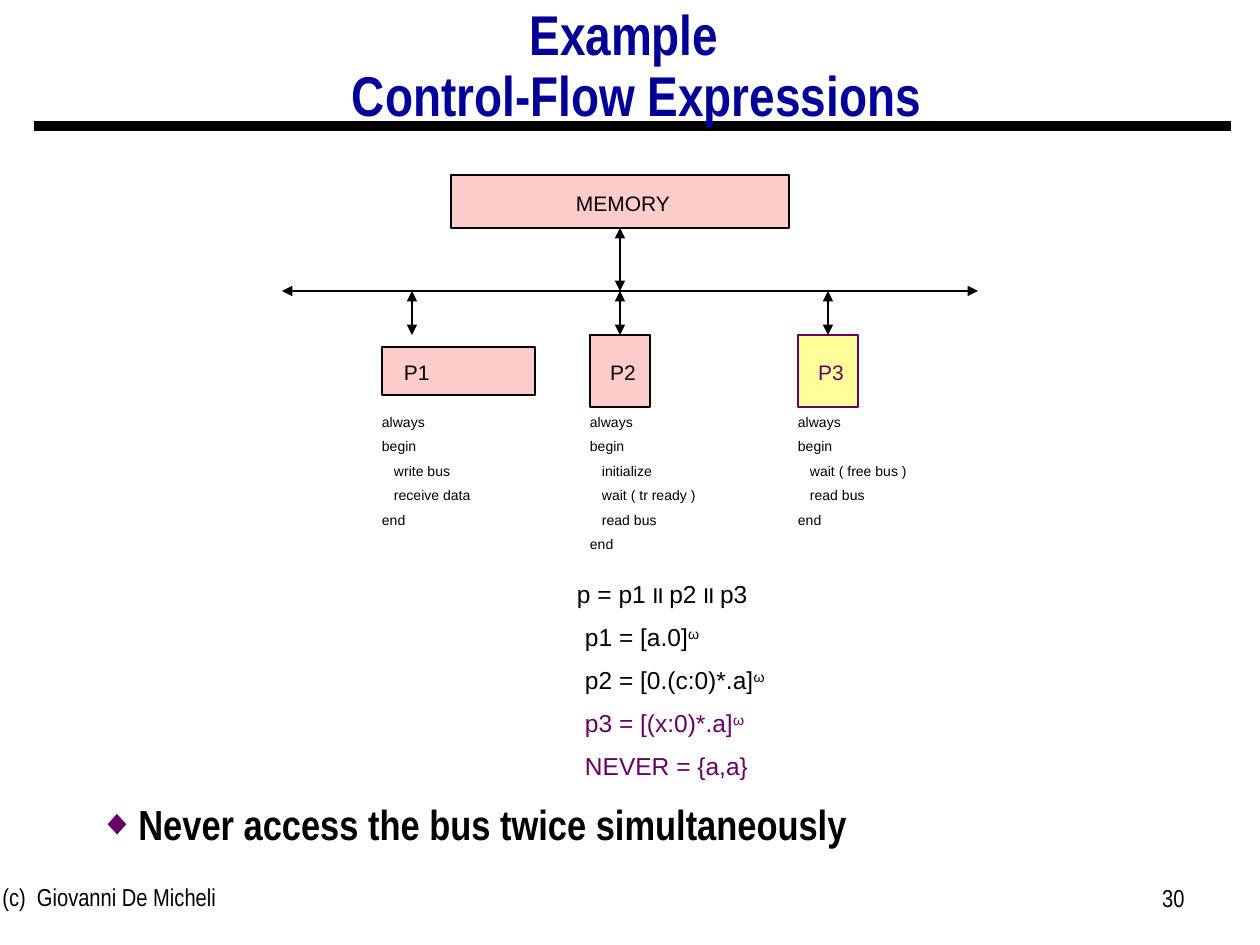
from pptx import Presentation
from pptx.dml.color import RGBColor
from pptx.enum.shapes import MSO_CONNECTOR as LINE, MSO_SHAPE as SHAPE
from pptx.enum.text import MSO_ANCHOR as ANCHOR, PP_ALIGN as ALIGN
from pptx.oxml.ns import qn
from pptx.util import Pt
from lxml.etree import SubElement as sub

SCALE = 914400 / 126
BLACK = RGBColor(0x00, 0x00, 0x00)
NAVY = RGBColor(0x00, 0x00, 0x99)
PURPLE = RGBColor(0x66, 0x00, 0x66)
PINK = RGBColor(0xFF, 0xCC, 0xCC)
YELLOW = RGBColor(0xFF, 0xFF, 0x99)
NARROW = "Arial Narrow"

BUS_Y = 291
COL_X, COL_STEP = 382, 208
STEM = 30  # from a column's left edge to its arrow

PROGRAMS = [
    ["always", "begin", ">write bus", ">receive data", "end"],
    ["always", "begin", ">initialize", ">wait ( tr ready )", ">read bus", "end"],
    ["always", "begin", ">wait ( free bus )", ">read bus", "end"],
]
FORMULAS = [
    ("p = p1 װ p2 װ p3", "", BLACK),
    (">p1 = [a.0]", "ω", BLACK),
    (">p2 = [0.(c:0)*.a]", "ω", BLACK),
    (">p3 = [(x:0)*.a]", "ω", PURPLE),
    (">NEVER = {a,a}", "", PURPLE),
]


def px(n):
    return round(n * SCALE)


def style(run, size, color=BLACK, font="Arial", bold=False):
    run.font.size = Pt(size)
    run.font.name = font
    run.font.bold = bold
    run.font.color.rgb = color


def add_text(slide, text, x, y, w, h, size, color=BLACK, bold=False, align=ALIGN.LEFT):
    """Add a one-paragraph text box in the narrow font and return its frame."""
    frame = slide.shapes.add_textbox(px(x), px(y), px(w), px(h)).text_frame
    frame.word_wrap = True
    frame.text = text
    para = frame.paragraphs[0]
    para.alignment = align
    for run in para.runs:
        style(run, size, color, NARROW, bold)
    return frame


def add_lines(slide, rows, x, y, w, h, size, gap, indent):
    """Stack rows of (text, superscript, colour); a leading > indents a row."""
    frame = slide.shapes.add_textbox(px(x), px(y), px(w), px(h)).text_frame
    frame.word_wrap = True
    frame.margin_left = 0
    for i, (text, power, color) in enumerate(rows):
        para = frame.paragraphs[0] if i == 0 else frame.add_paragraph()
        para.text = text.lstrip(">")
        if i:
            para.space_before = Pt(gap)
        if text.startswith(">"):
            para._p.get_or_add_pPr().set("marL", str(px(indent)))
        style(para.runs[0], size, color)
        if power:
            run = para.add_run()
            run.text = power
            style(run, size, color)
            run.font._element.set("baseline", "30000")


def add_box(slide, label, x, y, w, h, fill=PINK, color=BLACK, inset=6, align=ALIGN.CENTER):
    box = slide.shapes.add_shape(SHAPE.RECTANGLE, px(x), px(y), px(w), px(h))
    box.shadow.inherit = False
    box.fill.solid()
    box.fill.fore_color.rgb = fill
    box.line.color.rgb = color
    box.line.width = Pt(0.75)
    frame = box.text_frame
    frame.margin_left, frame.margin_right = px(inset), 0
    frame.margin_top, frame.margin_bottom = px(3), 0
    frame.vertical_anchor = ANCHOR.MIDDLE
    frame.text = label
    para = frame.paragraphs[0]
    para.alignment = align
    style(para.runs[0], 12, color)
    return box


def add_line(slide, x1, y1, x2, y2, width=0.75, heads=True):
    line = slide.shapes.add_connector(LINE.STRAIGHT, px(x1), px(y1), px(x2), px(y2))
    line.line.color.rgb = BLACK
    line.line.width = Pt(width)
    props = line._element.spPr
    if heads:
        for end in ("a:headEnd", "a:tailEnd"):
            sub(props.find(qn("a:ln")), qn(end), type="triangle")
    sub(props, qn("a:effectLst"))
    return line


def add_bullet(para, mark, color, size, indent):
    props = para._p.get_or_add_pPr()
    props.set("marL", str(px(indent)))
    props.set("indent", str(-px(indent)))
    sub(sub(props, qn("a:buClr")), qn("a:srgbClr"), val=str(color))
    sub(props, qn("a:buSzPct"), val=str(size * 1000))
    sub(props, qn("a:buFont"), typeface="Arial")
    sub(props, qn("a:buChar"), char=mark)


def add_frame(slide):
    """Add the rule, title and footer."""
    add_line(slide, 34, 126, 1231, 126, width=6, heads=False)
    title = add_text(slide, "Example \v Control-Flow Expressions", 95, 0, 1071, 136,
                     32, NAVY, True, ALIGN.CENTER)
    title.vertical_anchor = ANCHOR.MIDDLE
    title.paragraphs[0].line_spacing = 0.9
    add_text(slide, "(c)  Giovanni De Micheli", -10, 876, 399, 66, 14)
    add_text(slide, "30", 903, 877, 294, 66, 14, align=ALIGN.RIGHT)


def add_diagram(slide):
    cols = [COL_X + i * COL_STEP for i in range(3)]
    memory = add_box(slide, "MEMORY", 451, 175, 338, 53)
    add_box(slide, "P1", cols[0], 347, 153, 48, inset=22, align=ALIGN.LEFT)
    p2 = add_box(slide, "P2", cols[1], 335, 60, 72)
    p3 = add_box(slide, "P3", cols[2], 335, 60, 72, YELLOW, PURPLE)

    add_line(slide, 282, BUS_Y, 978, BUS_Y)
    mid = cols[1] + STEM
    add_line(slide, mid, 228, mid, BUS_Y).begin_connect(memory, 2)
    for x, box in zip(cols, (None, p2, p3)):
        stem = add_line(slide, x + STEM, BUS_Y, x + STEM, 335)
        if box:
            stem.end_connect(box, 0)

    for x, code in zip(cols, PROGRAMS):
        rows = [(text, "", BLACK) for text in code]
        add_lines(slide, rows, x, 407, 200, 26 * len(rows), 8, 4.4, 12)


def main():
    deck = Presentation()
    deck.slide_width, deck.slide_height = px(1260), px(945)
    slide = deck.slides.add_slide(deck.slide_layouts[6])
    add_frame(slide)
    add_diagram(slide)
    add_lines(slide, FORMULAS, 577, 573, 262, 218, 14, 7.7, 8)
    body = add_text(slide, "Never access the bus twice simultaneously",
                    87, 780, 1071, 84, 24, bold=True)
    para = body.paragraphs[0]
    para.line_spacing = 1.25
    add_bullet(para, "◆", PURPLE, 85, 39)
    deck.save("out.pptx")


if __name__ == "__main__":
    main()
